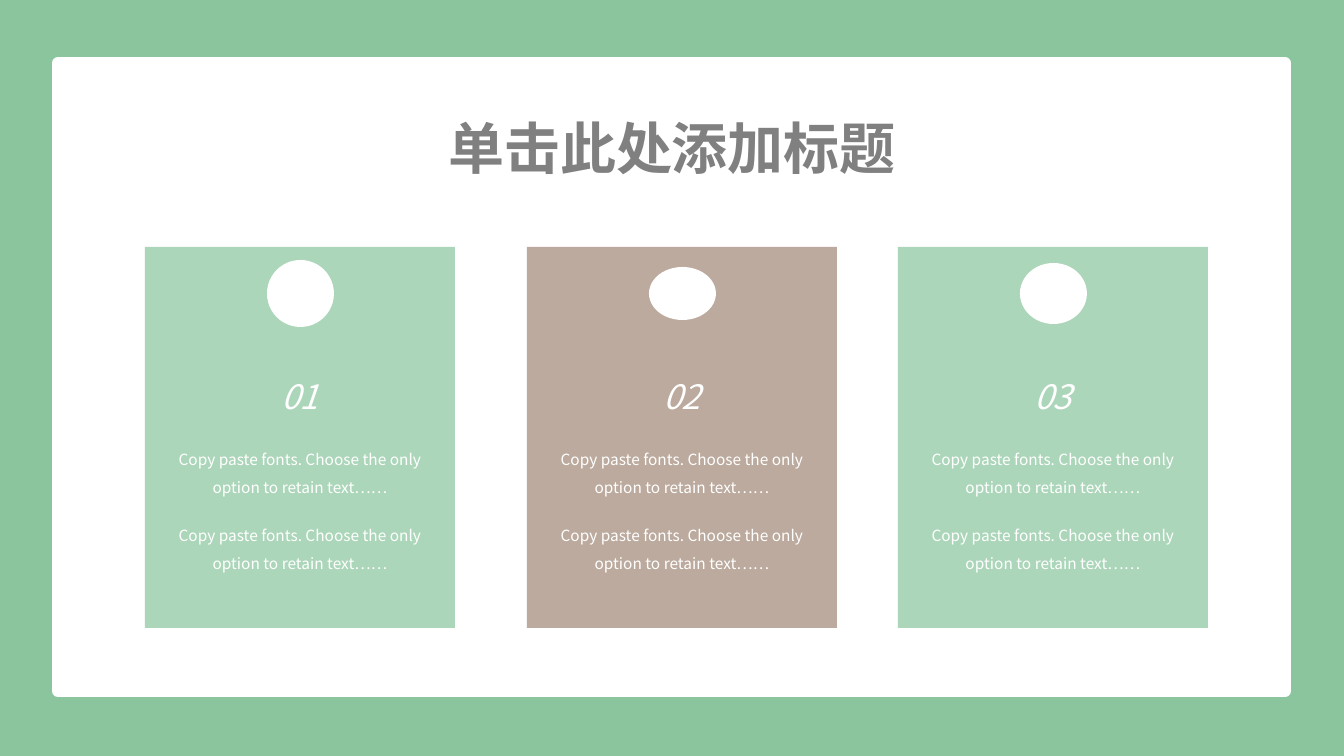
from pptx import Presentation
from pptx.dml.color import RGBColor
from pptx.enum.shapes import MSO_SHAPE
from pptx.enum.text import MSO_ANCHOR, MSO_AUTO_SIZE, PP_ALIGN
from pptx.oxml.ns import qn
from pptx.oxml.xmlchemy import OxmlElement
from pptx.util import Pt

PX = 12192000 / 1344
RECTANGLE, OVAL = MSO_SHAPE.RECTANGLE, MSO_SHAPE.OVAL
TOP, MIDDLE, BOTTOM = MSO_ANCHOR.TOP, MSO_ANCHOR.MIDDLE, MSO_ANCHOR.BOTTOM
CENTER, NO_AUTOFIT = PP_ALIGN.CENTER, MSO_AUTO_SIZE.NONE

GREEN = RGBColor(0x8A, 0xC5, 0x9E)
BROWN = RGBColor(0x9F, 0x87, 0x74)
WHITE = RGBColor(0xFF, 0xFF, 0xFF)
GREY = RGBColor(0x80, 0x80, 0x80)
FONT = "Noto Sans CJK SC"


def add_filled(kind, box, color):
    shape = slide.shapes.add_shape(kind, *[round(v * PX) for v in box])
    shape.shadow.inherit = False
    shape.fill.solid()
    shape.fill.fore_color.rgb = color
    shape.line.fill.background()
    return shape


def write_text(shape, text, size, color, anchor):
    frame = shape.text_frame
    frame.word_wrap = True
    frame.auto_size = NO_AUTOFIT
    frame.vertical_anchor = anchor
    paragraph = frame.paragraphs[0]
    paragraph.text = text
    paragraph.alignment = CENTER
    font = paragraph.font
    font.size = Pt(size)
    font.color.rgb = color
    font.name = FONT
    # East Asian typeface for the Chinese characters
    east_asian = OxmlElement("a:ea")
    east_asian.set("typeface", FONT)
    paragraph._p.pPr.find(qn("a:defRPr")).append(east_asian)
    return paragraph


presentation = Presentation()
presentation.slide_width = round(1344 * PX)
presentation.slide_height = round(756 * PX)
slide = presentation.slides.add_slide(presentation.slide_layouts[5])
slide.background.fill.solid()
slide.background.fill.fore_color.rgb = GREEN

# White panel, placed behind the title
panel = add_filled(RECTANGLE, (58, 63, 1227, 628), WHITE)
panel.line.color.rgb = WHITE
panel.line.width = Pt(8.5)
title = slide.shapes.title
title.element.addprevious(panel.element)

# Title
title.left, title.top, title.width, title.height = [
    round(v * PX) for v in (74, 111, 1196, 75)]
heading = write_text(title, "单击此处添加标题", 40, GREY, BOTTOM)
heading.font.bold = True

# Cards: left edge, colour, icon top and icon height
CARDS = [(145, GREEN, 260, 67), (527, BROWN, 267, 53), (898, GREEN, 263, 61)]
DESCRIPTION = "Copy paste fonts. Choose the only option to retain text……"

for number, (left, color, icon_top, icon_height) in enumerate(CARDS, 1):
    card = add_filled(RECTANGLE, (left, 247, 310, 381), color)
    alpha = OxmlElement("a:alpha")
    alpha.set("val", "70000")
    card.element.spPr.find(qn("a:solidFill"))[0].append(alpha)

    add_filled(OVAL, (left + 122, icon_top, 67, icon_height), WHITE)

    # Number, then two descriptions
    rows = [(366, 60, f"{number:02d}", 24, MIDDLE),
            (436, 75, DESCRIPTION, 11, TOP),
            (512, 75, DESCRIPTION, 11, TOP)]
    for top, height, text, size, anchor in rows:
        text_box = slide.shapes.add_textbox(
            *[round(v * PX) for v in (left + 10, top, 290, height)])
        paragraph = write_text(text_box, text, size, WHITE, anchor)
        if anchor == MIDDLE:
            paragraph.font.italic = True
        else:
            paragraph.line_spacing = 1.5

presentation.save("out.pptx")
